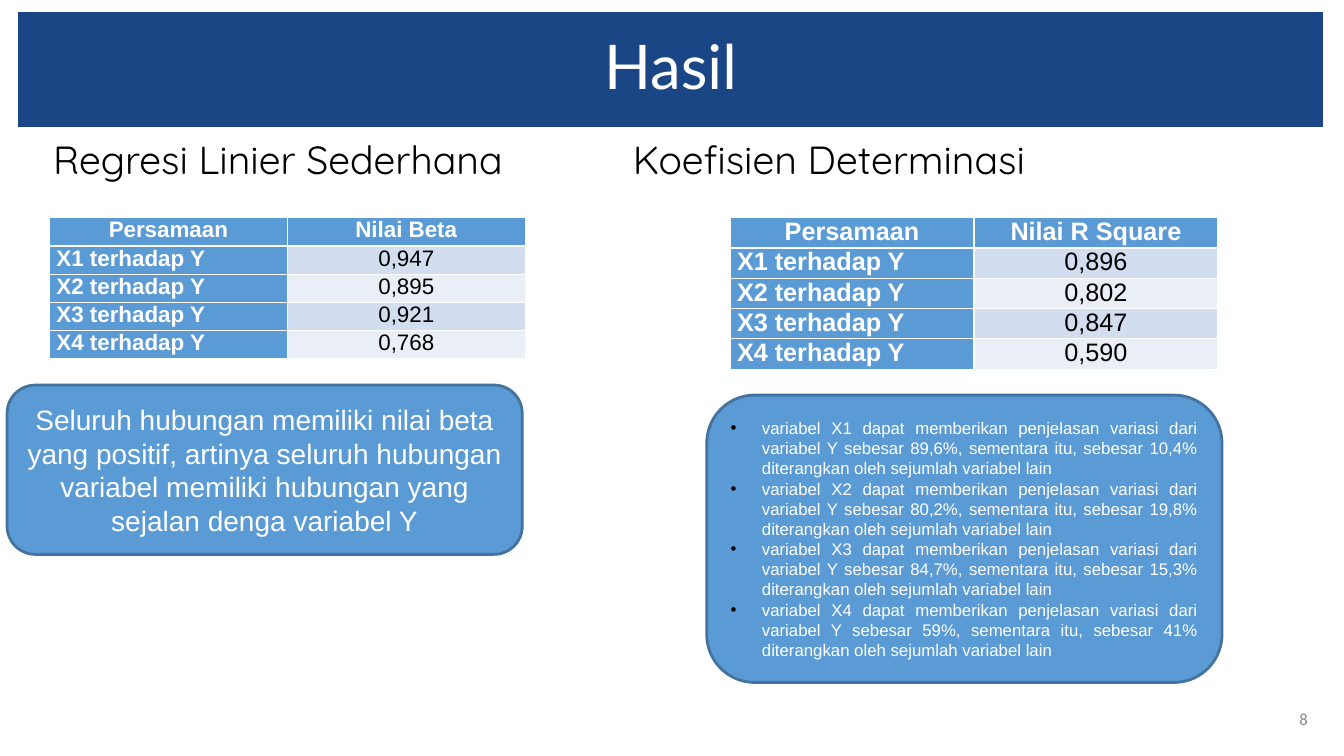
import pptx
import pptx.dml.color
import pptx.enum.shapes
import pptx.enum.text
import pptx.util
from lxml import etree

RGBColor = pptx.dml.color.RGBColor
ALIGN = pptx.enum.text.PP_ALIGN
ANCHOR = pptx.enum.text.MSO_ANCHOR

EMU_PER_PX = 9144

WHITE = RGBColor(0xFF, 0xFF, 0xFF)
BLACK = RGBColor(0x00, 0x00, 0x00)
GREY = RGBColor(0x88, 0x88, 0x88)
NAVY = RGBColor(0x1B, 0x46, 0x85)
BLUE = RGBColor(0x5B, 0x9B, 0xD5)
BLUE_EDGE = RGBColor(0x43, 0x73, 0x9E)
BANDS = (RGBColor(0xD2, 0xDE, 0xEF), RGBColor(0xEA, 0xEF, 0xF7))

BETA_ROWS = [
    ("Persamaan", "Nilai Beta"),
    ("X1 terhadap Y", "0,947"),
    ("X2 terhadap Y", "0,895"),
    ("X3 terhadap Y", "0,921"),
    ("X4 terhadap Y", "0,768"),
]
R_SQUARE_ROWS = [
    ("Persamaan", "Nilai R Square"),
    ("X1 terhadap Y", "0,896"),
    ("X2 terhadap Y", "0,802"),
    ("X3 terhadap Y", "0,847"),
    ("X4 terhadap Y", "0,590"),
]
BETA_SUMMARY = (
    "Seluruh hubungan memiliki nilai beta yang positif, artinya seluruh hubungan "
    "variabel memiliki hubungan yang sejalan denga variabel Y"
)
EXPLAINED_SHARES = [
    ("X1", "89,6%", "10,4%"),
    ("X2", "80,2%", "19,8%"),
    ("X3", "84,7%", "15,3%"),
    ("X4", "59%", "41%"),
]


def px(value):
    return pptx.util.Emu(value * EMU_PER_PX)


def format_paragraph(paragraph, font_name, size, color, alignment, bold=False):
    paragraph.alignment = alignment
    for run in paragraph.runs:
        run.font.name = font_name
        run.font.size = pptx.util.Pt(size)
        run.font.color.rgb = color
        run.font.bold = bold


def set_indent(paragraph, left, first_line):
    properties = paragraph._p.get_or_add_pPr()
    properties.set("marL", str(px(left)))
    properties.set("indent", str(px(first_line)))
    return properties


def add_bullet(paragraph):
    properties = set_indent(paragraph, 31, -31)
    qn = pptx.oxml.ns.qn
    bullet_color = etree.SubElement(properties, qn("a:buClr"))
    etree.SubElement(bullet_color, qn("a:srgbClr"), val=str(BLACK))
    etree.SubElement(properties, qn("a:buFont"), typeface="Arial")
    etree.SubElement(properties, qn("a:buChar"), char="•")


def format_title(slide, text):
    title = slide.shapes.title
    title.left, title.top, title.width, title.height = px(18), px(12), px(1294), px(114)
    title.fill.solid()
    title.fill.fore_color.rgb = NAVY
    title.text_frame.text = text
    title.text_frame.vertical_anchor = ANCHOR.MIDDLE
    paragraph = title.text_frame.paragraphs[0]
    paragraph.line_spacing = 0.9
    format_paragraph(paragraph, "Lato", 44, WHITE, ALIGN.CENTER)


def add_text(slide, left, top, width, height, text):
    text_frame = slide.shapes.add_textbox(px(left), px(top), px(width), px(height)).text_frame
    text_frame.word_wrap = True
    text_frame.text = text
    return text_frame


def add_headings(slide):
    text_frame = add_text(
        slide, 18, 135, 1294, 557, "Regresi Linier Sederhana\t\t\tKoefisien Determinasi"
    )
    paragraph = text_frame.paragraphs[0]
    set_indent(paragraph, 50, -25)
    paragraph.line_spacing = 0.9
    format_paragraph(paragraph, "Quicksand", 28, BLACK, ALIGN.LEFT)


def add_page_number(slide, number):
    text_frame = add_text(slide, 1250, 693, 57, 40, number)
    text_frame.vertical_anchor = ANCHOR.MIDDLE
    format_paragraph(text_frame.paragraphs[0], "Calibri", 12, GREY, ALIGN.RIGHT)


def add_result_table(slide, left, top, column_width, rows, size):
    row_height = 28
    table = slide.shapes.add_table(
        len(rows), 2, px(left), px(top), px(2 * column_width), px(len(rows) * row_height)
    ).table
    table.first_col = True
    for column in table.columns:
        column.width = px(column_width)
    for row_index, values in enumerate(rows):
        table.rows[row_index].height = px(row_height)
        for column_index, value in enumerate(values):
            is_header = row_index == 0 or column_index == 0
            is_label = row_index > 0 and column_index == 0
            cell = table.cell(row_index, column_index)
            cell.margin_left = cell.margin_right = px(7)
            cell.margin_top = cell.margin_bottom = 0
            cell.fill.solid()
            cell.fill.fore_color.rgb = BLUE if is_header else BANDS[(row_index - 1) % 2]
            cell.text_frame.text = value
            format_paragraph(
                cell.text_frame.paragraphs[0],
                "Arial",
                size,
                WHITE if is_header else BLACK,
                ALIGN.JUSTIFY if is_label else ALIGN.CENTER,
                bold=is_header,
            )


def add_callout(slide, left, top, width, height, texts, size, alignment, bulleted=False):
    shape = slide.shapes.add_shape(
        pptx.enum.shapes.MSO_SHAPE.ROUNDED_RECTANGLE, px(left), px(top), px(width), px(height)
    )
    shape.shadow.inherit = False
    shape.fill.solid()
    shape.fill.fore_color.rgb = BLUE
    shape.line.color.rgb = BLUE_EDGE
    shape.line.width = pptx.util.Pt(2)
    text_frame = shape.text_frame
    text_frame.word_wrap = True
    text_frame.vertical_anchor = ANCHOR.MIDDLE
    text_frame.text = "\n".join(texts)
    for paragraph in text_frame.paragraphs:
        if bulleted:
            add_bullet(paragraph)
        format_paragraph(paragraph, "Arial", size, WHITE, alignment)


def main():
    presentation = pptx.Presentation()
    presentation.slide_width = px(1333)
    presentation.slide_height = px(750)
    slide = presentation.slides.add_slide(presentation.slide_layouts[5])

    format_title(slide, "Hasil")
    add_headings(slide)
    add_callout(slide, 7, 382, 511, 168, [BETA_SUMMARY], 20, ALIGN.CENTER)
    add_result_table(slide, 49, 216, 236, BETA_ROWS, 16)
    add_result_table(slide, 724, 216, 242, R_SQUARE_ROWS, 18)
    explanations = [
        f"variabel {variable} dapat memberikan penjelasan variasi dari variabel Y sebesar "
        f"{explained}, sementara itu, sebesar {remainder} diterangkan oleh sejumlah variabel lain"
        for variable, explained, remainder in EXPLAINED_SHARES
    ]
    add_callout(slide, 701, 392, 511, 285, explanations, 12, ALIGN.JUSTIFY, bulleted=True)
    add_page_number(slide, "8")
    presentation.save("out.pptx")


if __name__ == "__main__":
    main()
